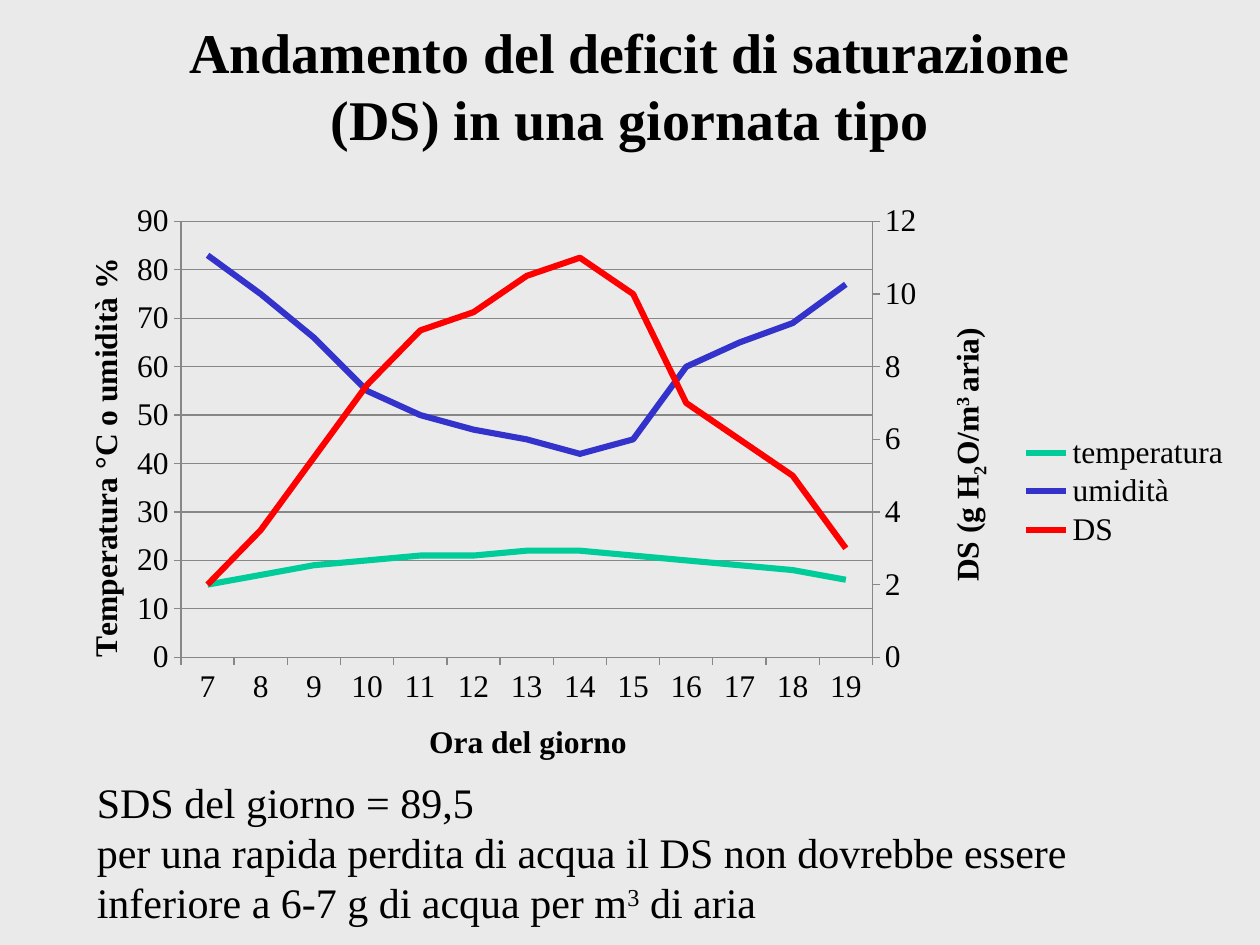
from copy import deepcopy

from pptx import Presentation
from pptx.chart.axis import ValueAxis
from pptx.chart.data import CategoryChartData
from pptx.dml.color import RGBColor
from pptx.enum.chart import XL_CHART_TYPE, XL_LEGEND_POSITION, XL_MARKER_STYLE, XL_TICK_MARK
from pptx.enum.text import MSO_ANCHOR, PP_ALIGN
from pptx.oxml import parse_xml
from pptx.oxml.ns import nsdecls, qn
from pptx.util import Inches, Pt

rgb = RGBColor.from_string


def write(p, parts, size, bold=False):
    """Add (text, baseline) runs to a paragraph."""
    for text, baseline in parts:
        r = p.add_run()
        r.text = text
        fmt = {"name": "Times New Roman", "size": Pt(size), "bold": bold}
        for key, value in fmt.items():
            setattr(r.font, key, value)
        r.font.color.rgb = rgb("000000")
        if baseline:
            r.font._element.set("baseline", str(baseline))


def place(el, index, **fractions):
    """Give a chart part a manual layout in fractions of the chart."""
    for old in el.findall(qn("c:layout")):
        el.remove(old)
    target = '<c:layoutTarget val="inner"/>' if index == 0 else ""
    modes = '<c:xMode val="edge"/><c:yMode val="edge"/>'
    values = "".join(f'<c:{k} val="{v}"/>' for k, v in fractions.items())
    el.insert(index, parse_xml(
        f'<c:layout {nsdecls("c")}><c:manualLayout>{target}{modes}{values}'
        "</c:manualLayout></c:layout>"))


prs = Presentation()
prs.slide_width, prs.slide_height = Inches(10), Inches(7.5)
s = prs.slides.add_slide(prs.slide_layouts[6])
s.background.fill.solid()
s.background.fill.fore_color.rgb = rgb("EAEAEA")

# Title
tf = s.shapes.add_textbox(Inches(0.75), Inches(0.17), Inches(8.5), Inches(1)).text_frame
tf.word_wrap = True
tf.vertical_anchor = MSO_ANCHOR.MIDDLE
p = tf.paragraphs[0]
p.alignment = PP_ALIGN.CENTER
write(p, [("Andamento del deficit di saturazione", 0)], 32, True)
p.add_line_break()
write(p, [("(DS) in una giornata tipo", 0)], 32, True)

# Chart data
series = [
    ("temperatura", "00CC99", [15, 17, 19, 20, 21, 21, 22, 22, 21, 20, 19, 18, 16]),
    ("umidità", "3333CC", [83, 75, 66, 55, 50, 47, 45, 42, 45, 60, 65, 69, 77]),
    ("DS", "FF0000", [2, 3.5, 5.5, 7.5, 9, 9.5, 10.5, 11, 10, 7, 6, 5, 3]),
]
data = CategoryChartData()
data.categories = [str(hour) for hour in range(7, 20)]
for name, _, values in series:
    data.add_series(name, values)
chart = s.shapes.add_chart(XL_CHART_TYPE.LINE, Inches(0.35), Inches(1.53),
                           Inches(9.53), Inches(4.74), data).chart
chart.has_title = False
chart.font.name, chart.font.size = "Times New Roman", Pt(18)
chart.font.color.rgb = rgb("000000")
chart.plots[0].vary_by_categories = False
for line, (_, color, _) in zip(chart.plots[0].series, series):
    line.smooth = False
    line.marker.style = XL_MARKER_STYLE.NONE
    line.format.line.width = Pt(3.5)
    line.format.line.color.rgb = rgb(color)

# Legend
chart.has_legend = True
chart.legend.position = XL_LEGEND_POSITION.RIGHT
chart.legend.include_in_layout = False

# Primary axes, held before the second value axis exists
hour_axis, left_axis = chart.category_axis, chart.value_axis
for axis in (hour_axis, left_axis):
    axis.major_tick_mark = XL_TICK_MARK.OUTSIDE
    axis.minor_tick_mark = XL_TICK_MARK.NONE
    axis.format.line.color.rgb = rgb("878787")
grid = left_axis.major_gridlines.format.line
grid.color.rgb = rgb("878787")
grid.width = Pt(0.75)

# DS moves to a second line chart with its own axes
plot_area = chart.element.xpath(".//c:plotArea")[0]
left_lines = plot_area.xpath("c:lineChart")[0]
cat_ax, val_ax = plot_area.xpath("c:catAx")[0], plot_area.xpath("c:valAx")[0]
right_lines, cat_ax2, val_ax2 = (deepcopy(el) for el in (left_lines, cat_ax, val_ax))
left_lines.remove(left_lines.xpath("c:ser")[2])
for ser in right_lines.xpath("c:ser")[:2]:
    right_lines.remove(ser)
left_lines.addnext(right_lines)
val_ax.addnext(val_ax2)
val_ax2.addnext(cat_ax2)
for el, ids in ((right_lines, ("5001", "5002")), (cat_ax2, ("5001",)), (val_ax2, ("5002",))):
    for ax_id, value in zip(el.findall(qn("c:axId")), ids):
        ax_id.set("val", value)
cat_ax2.find(qn("c:crossAx")).set("val", "5002")
val_ax2.find(qn("c:crossAx")).set("val", "5001")
cat_ax2.find(qn("c:delete")).set("val", "1")
val_ax2.find(qn("c:axPos")).set("val", "r")
val_ax2.find(qn("c:crosses")).set("val", "max")
right_axis = ValueAxis(val_ax2)
right_axis.has_major_gridlines = False

# Scales
for axis, top, step in ((left_axis, 90, 10), (right_axis, 12, 2)):
    scale = {"minimum_scale": 0, "maximum_scale": top, "major_unit": step}
    for key, value in scale.items():
        setattr(axis, key, value)

# Axis titles
ds_title = [("DS (g H", 0), ("2", -25000), ("O/m", 0), ("3 ", 30000), ("aria)", 0)]
for axis, parts, x, y, angle in (
    (hour_axis, [("Ora del giorno", 0)], 0.316, 0.877, 0),
    (left_axis, [("Temperatura °C o umidità %", 0)], 0.03, 0.1, -90),
    (right_axis, ds_title, 0.75, 0.22, -90),
):
    title = axis.axis_title
    write(title.text_frame.paragraphs[0], parts, 18, True)
    title.element.xpath(".//a:bodyPr")[0].set("rot", str(angle * 60000))
    place(title.element, 1, x=x, y=y)
place(plot_area, 0, x=0.114, y=0.048, w=0.576, h=0.73)
place(chart.element.xpath(".//c:legend")[0], 1, x=0.81, y=0.4, w=0.18, h=0.2)

# Conclusion
tf = s.shapes.add_textbox(Inches(0.67), Inches(6.11), Inches(8.32), Inches(1.31)).text_frame
tf.word_wrap = True
write(tf.paragraphs[0], [("SDS del giorno = 89,5", 0)], 24)
write(tf.add_paragraph(), [
    ("per una rapida perdita di acqua il DS non dovrebbe essere "
     "inferiore a 6-7 g di acqua per m", 0),
    ("3", 30000),
    (" di aria", 0),
], 24)

prs.save("out.pptx")
